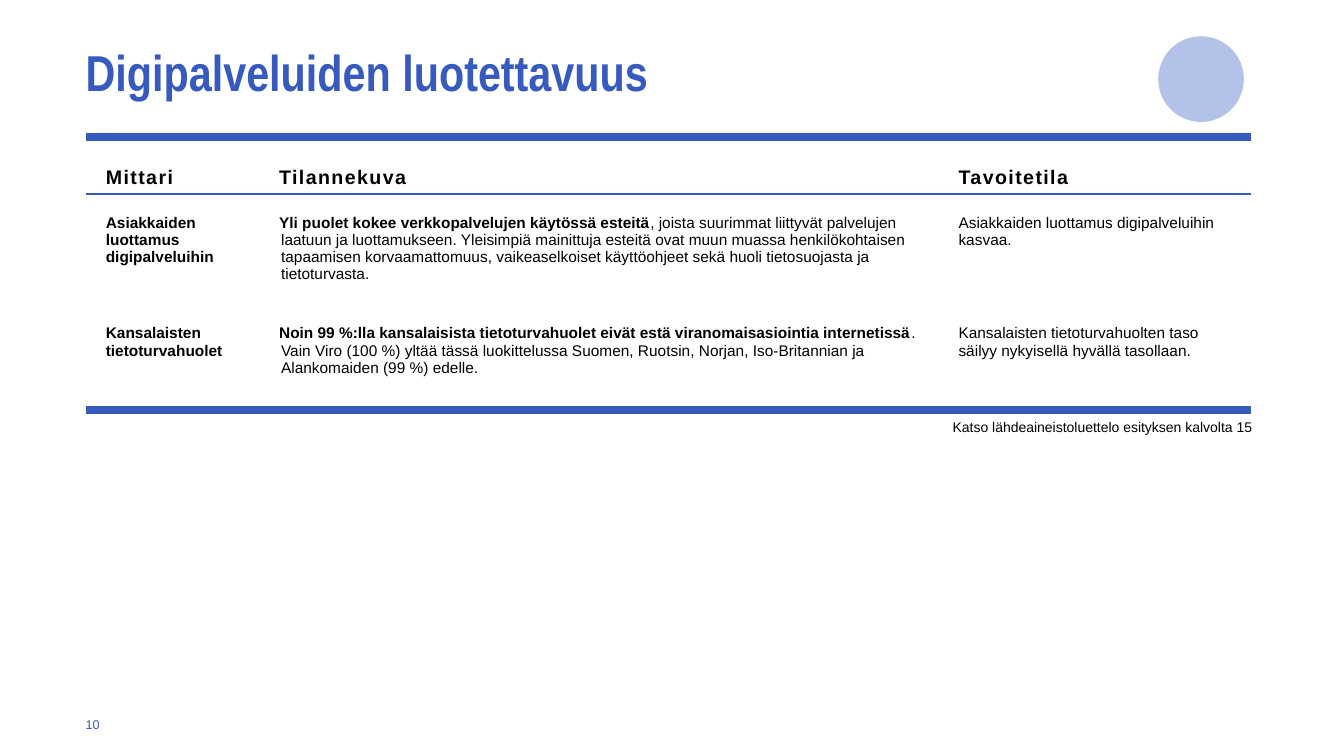
from dataclasses import dataclass

import lxml.etree
import pptx
import pptx.dml.color
import pptx.enum.shapes
import pptx.enum.text
import pptx.oxml.ns
import pptx.util

Pt = pptx.util.Pt
qn = pptx.oxml.ns.qn
Anchor = pptx.enum.text.MSO_ANCHOR
Align = pptx.enum.text.PP_ALIGN


@dataclass(frozen=True)
class Theme:
    """Colours, fonts and type sizes of the slide."""

    blue: str = "365ABD"
    pale_blue: str = "ACBCE7"
    black: str = "000000"
    font: str = "Arial"
    title_font: str = "Arial Narrow"
    title_size: int = 36
    header_size: int = 14
    body_size: int = 11
    note_size: int = 10
    number_size: int = 9
    thick: int = 6
    thin: int = 1


THEME = Theme()
LEFT, WIDTH = 61.2, 832.3
COLUMN_WIDTHS = (123.8, 482.4, 226.1)
ROW_HEIGHTS = (40.7, 79.2, 75.2)
CELL_LEFT_MARGINS = (14.4, 14.4, 17.3)
RULES = ((THEME.thick, THEME.thin), (THEME.thin, 0), (0, THEME.thick))
HEADERS = ("Mittari", "Tilannekuva", "Tavoitetila")
MEASURES = (
    (
        "Asiakkaiden luottamus digipalveluihin",
        "Yli puolet kokee verkkopalvelujen käytössä esteitä",
        ", joista suurimmat liittyvät palvelujen laatuun ja luottamukseen. "
        "Yleisimpiä mainittuja esteitä ovat muun muassa henkilökohtaisen "
        "tapaamisen korvaamattomuus, vaikeaselkoiset käyttöohjeet sekä huoli "
        "tietosuojasta ja tietoturvasta.",
        "Asiakkaiden luottamus digipalveluihin kasvaa.",
    ),
    (
        "Kansalaisten tietoturvahuolet",
        "Noin 99 %:lla kansalaisista tietoturvahuolet eivät estä "
        "viranomaisasiointia internetissä",
        ". Vain Viro (100 %) yltää tässä luokittelussa Suomen, Ruotsin, Norjan, "
        "Iso-Britannian ja Alankomaiden (99 %) edelle.",
        "Kansalaisten tietoturvahuolten taso\vsäilyy nykyisellä hyvällä tasollaan.",
    ),
)


def style_run(run, size, color=THEME.black, bold=False, name=THEME.font):
    """Give a run its font, size, colour and weight."""
    run.font.name, run.font.size, run.font.bold = name, Pt(size), bold
    run.font.color.rgb = pptx.dml.color.RGBColor.from_string(color)


def set_margins(target, left, top, right, bottom):
    """Set the inner margins of a cell or text frame."""
    target.margin_left, target.margin_top = Pt(left), Pt(top)
    target.margin_right, target.margin_bottom = Pt(right), Pt(bottom)


def add_label(slide, text, box, size, color, align=Align.LEFT, **style):
    """Add a single-line text box without margins."""
    frame = slide.shapes.add_textbox(*map(Pt, box)).text_frame
    frame.word_wrap = True
    frame.vertical_anchor = Anchor.MIDDLE
    set_margins(frame, 0, 0, 0, 0)
    paragraph = frame.paragraphs[0]
    paragraph.text = text
    paragraph.alignment = align
    style_run(paragraph.runs[0], size, color, **style)


def add_circle(slide, left, top, diameter):
    """Add the translucent circle in the corner."""
    circle = slide.shapes.add_shape(
        pptx.enum.shapes.MSO_SHAPE.OVAL, *map(Pt, (left, top, diameter, diameter))
    )
    circle.shadow.inherit = False
    circle.line.fill.background()
    circle.fill.solid()
    circle.fill.fore_color.rgb = pptx.dml.color.RGBColor.from_string(THEME.pale_blue)
    color = circle.fill._xPr.find(".//" + qn("a:srgbClr"))
    lxml.etree.SubElement(color, qn("a:alpha"), val="90000")


def set_borders(cell, top, bottom):
    """Draw the top and bottom rules of a cell and hide its sides."""
    properties = cell._tc.get_or_add_tcPr()
    for edge, width in (("lnL", 0), ("lnR", 0), ("lnT", top), ("lnB", bottom)):
        line = lxml.etree.SubElement(properties, qn("a:" + edge), w=str(Pt(width)))
        if width:
            fill = lxml.etree.SubElement(line, qn("a:solidFill"))
            lxml.etree.SubElement(fill, qn("a:srgbClr"), val=THEME.blue)
        else:
            lxml.etree.SubElement(line, qn("a:noFill"))


def fill_header(cell, text):
    """Write a letter-spaced column heading."""
    cell.vertical_anchor = Anchor.BOTTOM
    paragraph = cell.text_frame.paragraphs[0]
    paragraph.text = text
    run = paragraph.runs[0]
    style_run(run, THEME.header_size, bold=True)
    run._r.get_or_add_rPr().set("spc", "100")


def fill_body(cell, bold_text, plain_text):
    """Write a body cell as a bold lead followed by plain text."""
    cell.margin_top = Pt(14.4)
    paragraph = cell.text_frame.paragraphs[0]
    paragraph.space_after = Pt(6)
    paragraph.text = bold_text or plain_text
    if bold_text and plain_text:
        paragraph.add_run().text = plain_text
        properties = paragraph._p.get_or_add_pPr()
        properties.set("marL", str(Pt(1.4)))
        properties.set("indent", str(Pt(-1.4)))
    for index, run in enumerate(paragraph.runs):
        style_run(run, THEME.body_size, bold=bool(bold_text) and index == 0)
    for line_break in paragraph._p.findall(qn("a:br")):
        lxml.etree.SubElement(line_break, qn("a:rPr"), sz=str(THEME.body_size * 100))


def add_measures_table(slide, top):
    """Add the table of measures, current state and target state."""
    table = slide.shapes.add_table(
        len(ROW_HEIGHTS), len(COLUMN_WIDTHS),
        Pt(LEFT), Pt(top), Pt(WIDTH), Pt(sum(ROW_HEIGHTS)),
    ).table
    table.first_row = table.horz_banding = False
    for column, width in zip(table.columns, COLUMN_WIDTHS):
        column.width = Pt(width)
    for row, height, rules in zip(table.rows, ROW_HEIGHTS, RULES):
        row.height = Pt(height)
        for cell, margin in zip(row.cells, CELL_LEFT_MARGINS):
            set_margins(cell, margin, 3.6, 7.2, 3.6)
            set_borders(cell, *rules)
            cell.fill.background()
    for index, text in enumerate(HEADERS):
        fill_header(table.cell(0, index), text)
    for index, (measure, lead, detail, target) in enumerate(MEASURES, start=1):
        fill_body(table.cell(index, 0), measure, "")
        fill_body(table.cell(index, 1), lead, detail)
        fill_body(table.cell(index, 2), "", target)


def main():
    """Build the slide and save it."""
    presentation = pptx.Presentation()
    presentation.slide_width, presentation.slide_height = Pt(960), Pt(540)
    slide = presentation.slides.add_slide(presentation.slide_layouts[6])
    add_label(slide, "Digipalveluiden luotettavuus", (LEFT, 26, 740, 50),
              THEME.title_size, THEME.blue, bold=True, name=THEME.title_font)
    add_circle(slide, 827.3, 25.9, 61.2)
    add_measures_table(slide, 97.9)
    add_label(slide, "Katso lähdeaineistoluettelo esityksen kalvolta 15",
              (LEFT + WIDTH - 240, 295, 240.7, 20),
              THEME.note_size, THEME.black, Align.RIGHT)
    add_label(slide, "10", (LEFT, 508.3, 28.8, 18), THEME.number_size, THEME.blue)
    presentation.save("out.pptx")


if __name__ == "__main__":
    main()
